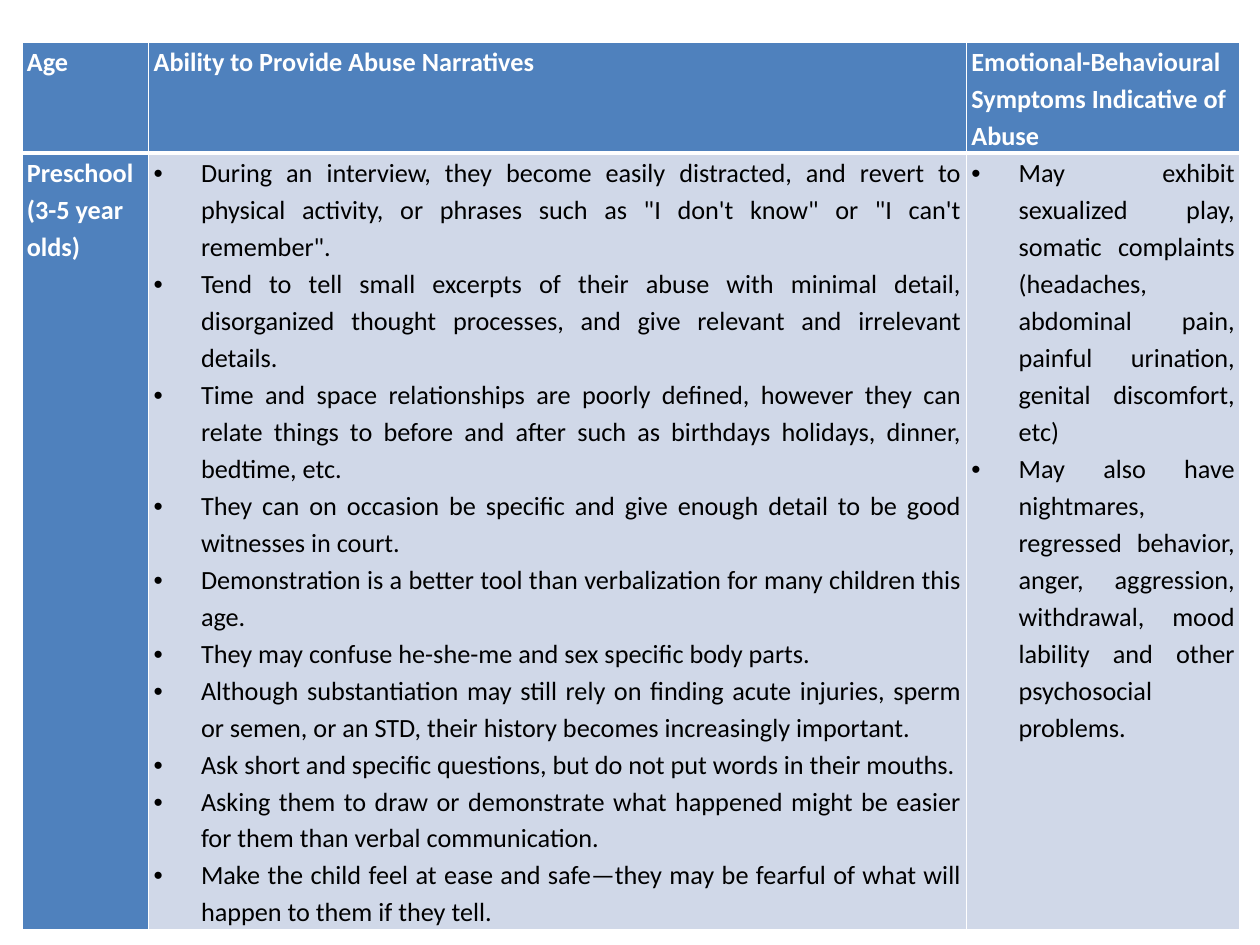
"""Build a slide with a table on abuse narratives and symptoms in preschool children."""
from lxml import etree
from pptx import Presentation
from pptx.dml.color import RGBColor
from pptx.enum.text import PP_ALIGN
from pptx.oxml.ns import qn
from pptx.util import Pt

LEFT, JUSTIFY = PP_ALIGN.LEFT, PP_ALIGN.JUSTIFY
WHITE = RGBColor(0xFF, 0xFF, 0xFF)
BLACK = RGBColor(0x00, 0x00, 0x00)
BLUE = RGBColor(0x4F, 0x81, 0xBD)
PALE_BLUE = RGBColor(0xD0, 0xD8, 0xE8)
BULLET_INDENT = Pt(27)

HEADINGS = [
    "Age",
    "Ability to Provide Abuse Narratives",
    "Emotional-Behavioural Symptoms Indicative of Abuse",
]
AGE_GROUP = "Preschool (3-5 year olds)"
NARRATIVE_ABILITY = [
    "During an interview, they become easily distracted, and revert to physical activity, "
    "or phrases such as \"I don't know\" or \"I can't remember\".",
    "Tend to tell small excerpts of their abuse with minimal detail, disorganized thought "
    "processes, and give relevant and irrelevant details.",
    "Time and space relationships are poorly defined, however they can relate things to "
    "before and after such as birthdays holidays, dinner, bedtime, etc.",
    "They can on occasion be specific and give enough detail to be good witnesses in court.",
    "Demonstration is a better tool than verbalization for many children this age.",
    "They may confuse he-she-me and sex specific body parts.",
    "Although substantiation may still rely on finding acute injuries, sperm or semen, "
    "or an STD, their history becomes increasingly important.",
    "Ask short and specific questions, but do not put words in their mouths.",
    "Asking them to draw or demonstrate what happened might be easier for them than "
    "verbal communication.",
    "Make the child feel at ease and safe—they may be fearful of what will happen to them "
    "if they tell.",
]
SYMPTOMS = [
    "May exhibit sexualized play, somatic complaints (headaches, abdominal pain, painful "
    "urination, genital discomfort, etc)",
    "May also have nightmares, regressed behavior, anger, aggression, withdrawal, mood "
    "lability and other psychosocial problems.",
]


def write_text(paragraph, text, color=WHITE, bold=True, align=LEFT, bullet=False):
    paragraph.alignment = align
    paragraph.line_spacing = 1.15
    run = paragraph.add_run()
    run.text = text
    run.font.name = "Calibri"
    run.font.size = Pt(15)
    run.font.bold = bold
    run.font.color.rgb = color
    if bullet:
        properties = paragraph._p.get_or_add_pPr()
        properties.set("marL", str(BULLET_INDENT))
        properties.set("indent", str(-BULLET_INDENT))
        etree.SubElement(properties, qn("a:buFont")).set("typeface", "Arial")
        etree.SubElement(properties, qn("a:buChar")).set("char", "•")


def style_cell(cell, fill, bottom_width, top_width):
    cell.margin_left = cell.margin_right = Pt(2.88)
    cell.margin_top = cell.margin_bottom = Pt(0)
    cell.fill.solid()
    cell.fill.fore_color.rgb = fill
    properties = cell._tc.get_or_add_tcPr()
    widths = {"a:lnL": 1, "a:lnR": 1, "a:lnT": top_width, "a:lnB": bottom_width}
    for position, (side, width) in enumerate(widths.items()):
        border = etree.Element(qn(side), w=str(Pt(width)))
        solid = etree.SubElement(border, qn("a:solidFill"))
        etree.SubElement(solid, qn("a:srgbClr")).set("val", str(WHITE))
        properties.insert(position, border)


prs = Presentation()
prs.slide_width, prs.slide_height = Pt(720), Pt(540)
slide = prs.slides.add_slide(prs.slide_layouts[6])

frame = slide.shapes.add_table(2, 3, Pt(12.5), Pt(24), Pt(696), Pt(504))
table = frame.table
table.horz_banding = False
for column, width in zip(table.columns, (72.5, 467.25, 156.25)):
    column.width = Pt(width)
for row, height in zip(table.rows, (60, 444)):
    row.height = Pt(height)

for column_index, heading in enumerate(HEADINGS):
    cell = table.cell(0, column_index)
    style_cell(cell, BLUE, bottom_width=3, top_width=1)
    write_text(cell.text_frame.paragraphs[0], heading)

age_cell = table.cell(1, 0)
style_cell(age_cell, BLUE, bottom_width=1, top_width=3)
write_text(age_cell.text_frame.paragraphs[0], AGE_GROUP)

for column_index, points in enumerate((NARRATIVE_ABILITY, SYMPTOMS), start=1):
    cell = table.cell(1, column_index)
    style_cell(cell, PALE_BLUE, bottom_width=1, top_width=3)
    for point_index, point in enumerate(points):
        text = cell.text_frame
        paragraph = text.add_paragraph() if point_index else text.paragraphs[0]
        write_text(paragraph, point, color=BLACK, bold=False, align=JUSTIFY, bullet=True)

prs.save("out.pptx")
